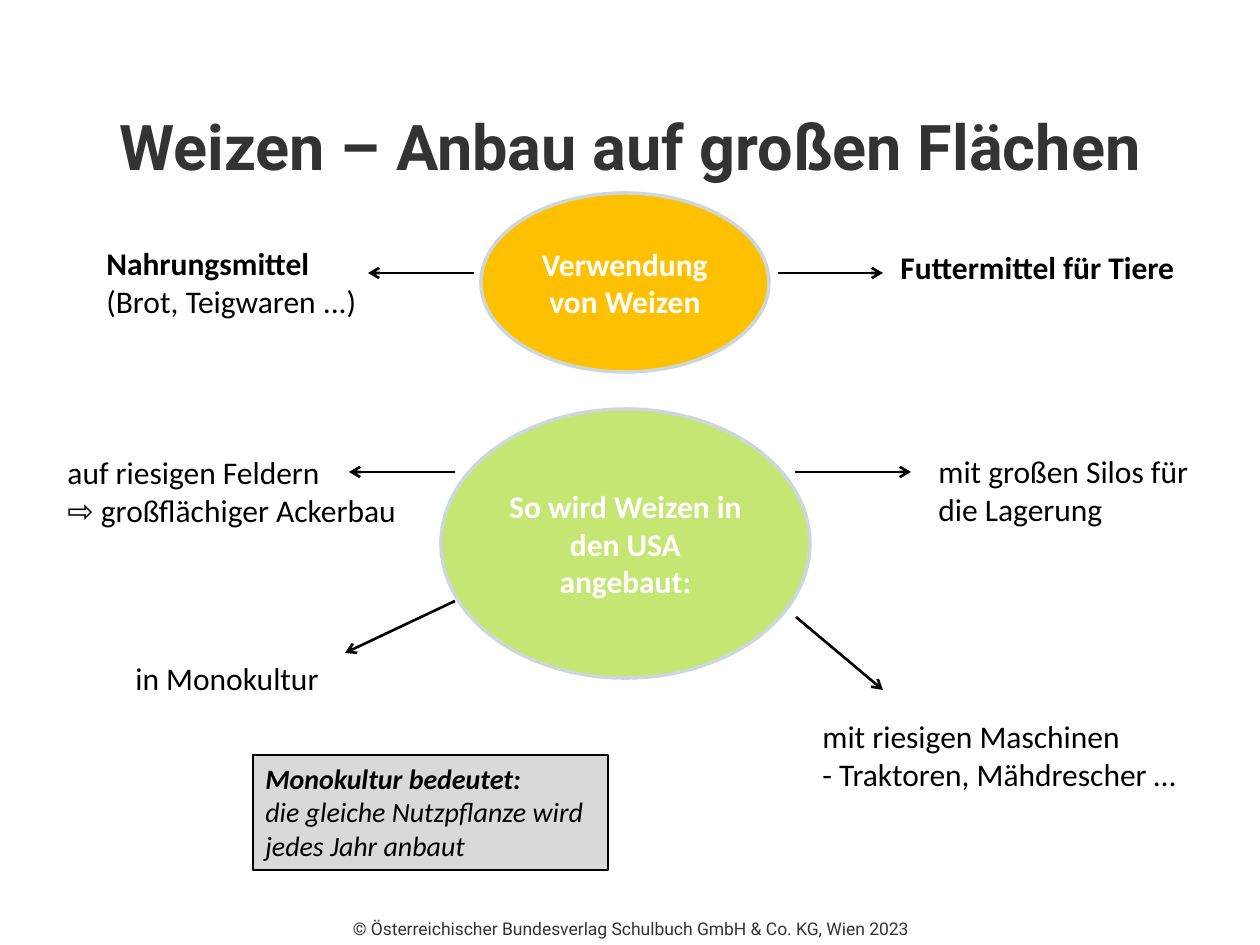
from lxml import etree
from pptx import Presentation, util as u
from pptx.dml.color import RGBColor
from pptx.enum import shapes, text
from pptx.oxml.ns import qn

PX = 914400 // 126
BLACK = RGBColor(0, 0, 0)
WHITE = RGBColor(255, 255, 255)
DARK = RGBColor(0x33, 0x33, 0x33)
GOLD = RGBColor(0xFF, 0xC0, 0x00)
GREEN = RGBColor(0xC5, 0xE6, 0x72)
RIM = RGBColor(0xCC, 0xD7, 0xD9)
GREY = RGBColor(0xD9, 0xD9, 0xD9)

# Content: boxes are left, top, width, height in px
TITLE = ((63, 101, 1134, 89), "Weizen – Anbau auf großen Flächen")
FOOT = ((-3, 898, 1260, 50),
        "© Österreichischer Bundesverlag Schulbuch GmbH & Co. KG, Wien 2023")
TOPICS = [
    ((481, 193, 288, 179), GOLD, "Verwendung von Weizen"),
    ((441, 409, 369, 269), GREEN, "So wird Weizen in den USA angebaut:"),
]
# Each line of a label: wording, bold
LABELS = [
    ((94, 238, 278, 89), [("Nahrungsmittel", True), ("(Brot, Teigwaren ...)", False)]),
    ((888, 242, 304, 50), [("Futtermittel für Tiere", True)]),
    ((55, 447, 359, 89), [("auf riesigen Feldern", False),
                          ("⇨ großflächiger Ackerbau", False)]),
    ((123, 653, 210, 50), [("in Monokultur", False)]),
    ((810, 711, 383, 89), [("mit riesigen Maschinen", False),
                           ("- Traktoren, Mähdrescher …", False)]),
    ((926, 446, 286, 89), [("mit großen Silos für", False), ("die Lagerung", False)]),
]
NOTE = ((253, 755, 355, 115), [("Monokultur bedeutet:", True),
                               ("die gleiche Nutzpflanze wird", False),
                               ("jedes Jahr anbaut", False)])
ARROWS = [
    (778, 273, 883, 273), (474, 273, 368, 273),
    (455, 472, 349, 472), (455, 601, 345, 653),
    (796, 617, 883, 690), (795, 472, 911, 472),
]


def emu(nums):
    return [n * PX for n in nums]


def add_run(para, words, size, color, bold=False, italic=False, face="Calibri"):
    run = para.add_run()
    run.text = words
    font = run.font
    font.name, font.size, font.bold, font.italic = face, u.Pt(size), bold, italic
    font.color.rgb = color


def add_box(slide, box):
    return slide.shapes.add_textbox(*emu(box)).text_frame


def add_form(slide, kind, box, fill, line, width):
    form = slide.shapes.add_shape(kind, *emu(box))
    form.shadow.inherit = False
    form.fill.solid()
    form.fill.fore_color.rgb = fill
    form.line.color.rgb = line
    form.line.width = u.Pt(width)
    return form.text_frame


def add_lines(frame, lines, size, italic=False):
    frame.word_wrap = False
    for i, (words, bold) in enumerate(lines):
        para = frame.add_paragraph() if i else frame.paragraphs[0]
        para.alignment = text.PP_ALIGN.LEFT
        add_run(para, words, size, BLACK, bold, italic)


def add_arrow(slide, ends):
    arrow = slide.shapes.add_connector(shapes.MSO_CONNECTOR.STRAIGHT, *emu(ends))
    arrow.line.color.rgb = BLACK
    arrow.line.width = u.Pt(1.5)
    etree.SubElement(arrow.line._get_or_add_ln(), qn("a:tailEnd"), type="arrow")
    etree.SubElement(arrow._element.spPr, qn("a:effectLst"))


def main():
    deck = Presentation()
    deck.slide_width, deck.slide_height = u.Inches(10), u.Inches(7.5)
    slide = deck.slides.add_slide(deck.slide_layouts[6])

    # Footer: the larger leading space sets the line height
    box, words = FOOT
    frame = add_box(slide, box)
    frame.word_wrap = True
    para = frame.paragraphs[0]
    para.alignment = text.PP_ALIGN.CENTER
    add_run(para, " ", 18, DARK)
    add_run(para, words, 10, DARK, face="Roboto")

    # Title
    box, words = TITLE
    frame = add_box(slide, box)
    frame.word_wrap = True
    frame.vertical_anchor = text.MSO_ANCHOR.MIDDLE
    para = frame.paragraphs[0]
    para.alignment = text.PP_ALIGN.CENTER
    add_run(para, words, 36, DARK, True, face="Roboto")

    # Topic ellipses
    for box, fill, words in TOPICS:
        frame = add_form(slide, shapes.MSO_SHAPE.OVAL, box, fill, RIM, 2)
        frame.vertical_anchor = text.MSO_ANCHOR.MIDDLE
        para = frame.paragraphs[0]
        para.alignment = text.PP_ALIGN.CENTER
        add_run(para, words, 18, WHITE, True)

    # Arrows and labels
    for ends in ARROWS:
        add_arrow(slide, ends)
    for box, lines in LABELS:
        add_lines(add_box(slide, box), lines, 18)

    # Definition note
    box, lines = NOTE
    frame = add_form(slide, shapes.MSO_SHAPE.RECTANGLE, box, GREY, BLACK, 0.75)
    frame.vertical_anchor = text.MSO_ANCHOR.TOP
    add_lines(frame, lines, 16, True)

    deck.save("out.pptx")


if __name__ == "__main__":
    main()
